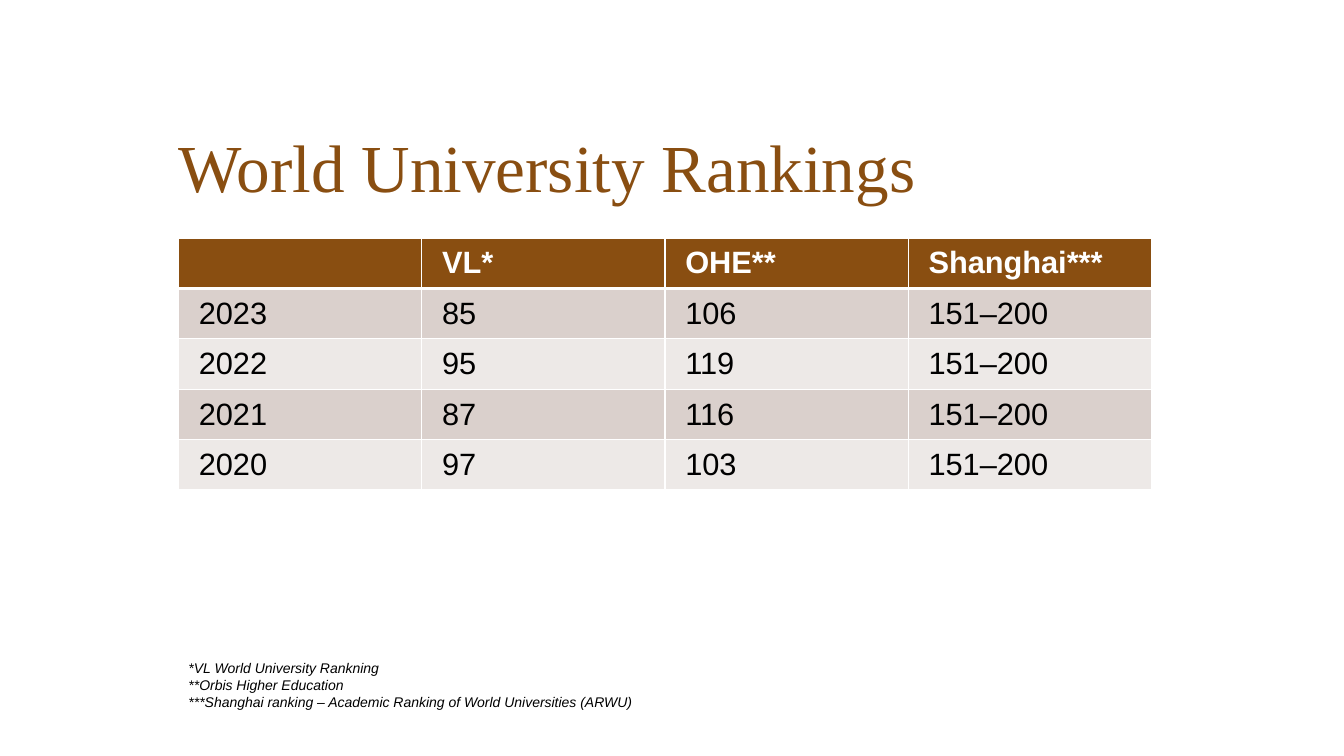
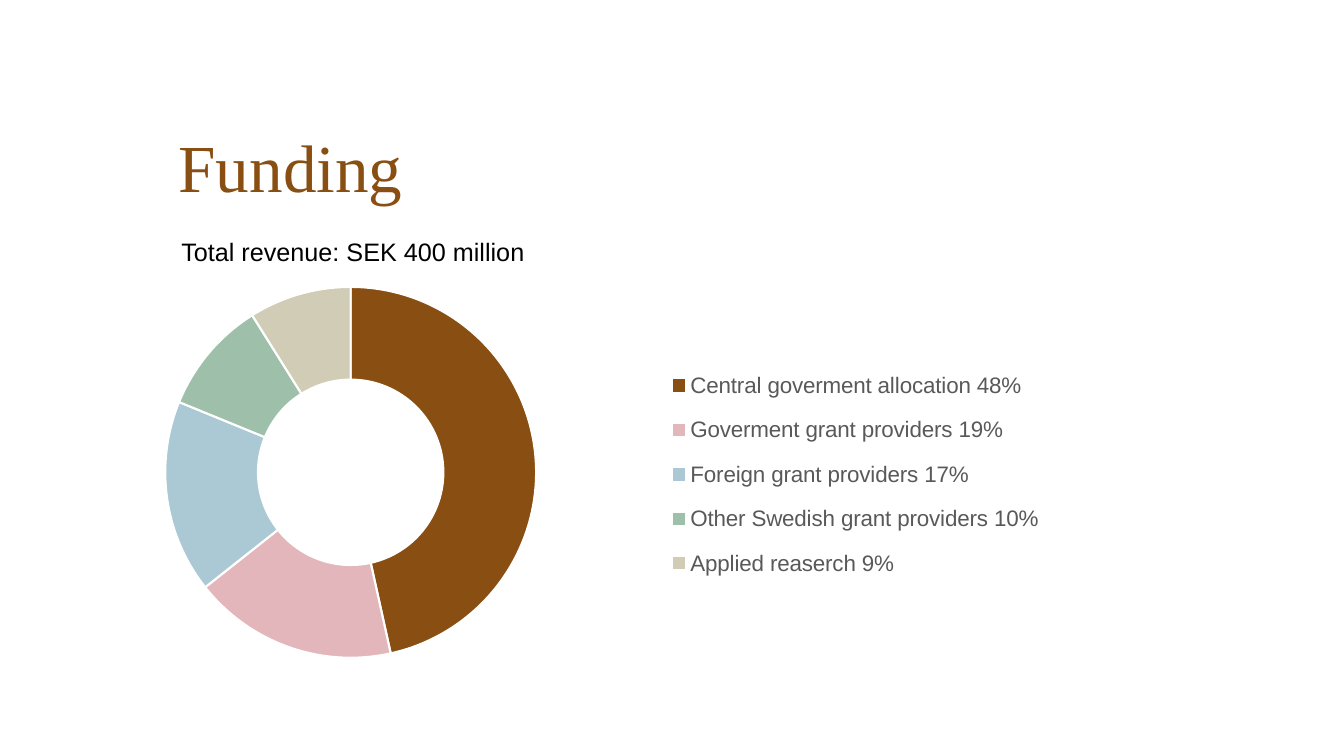
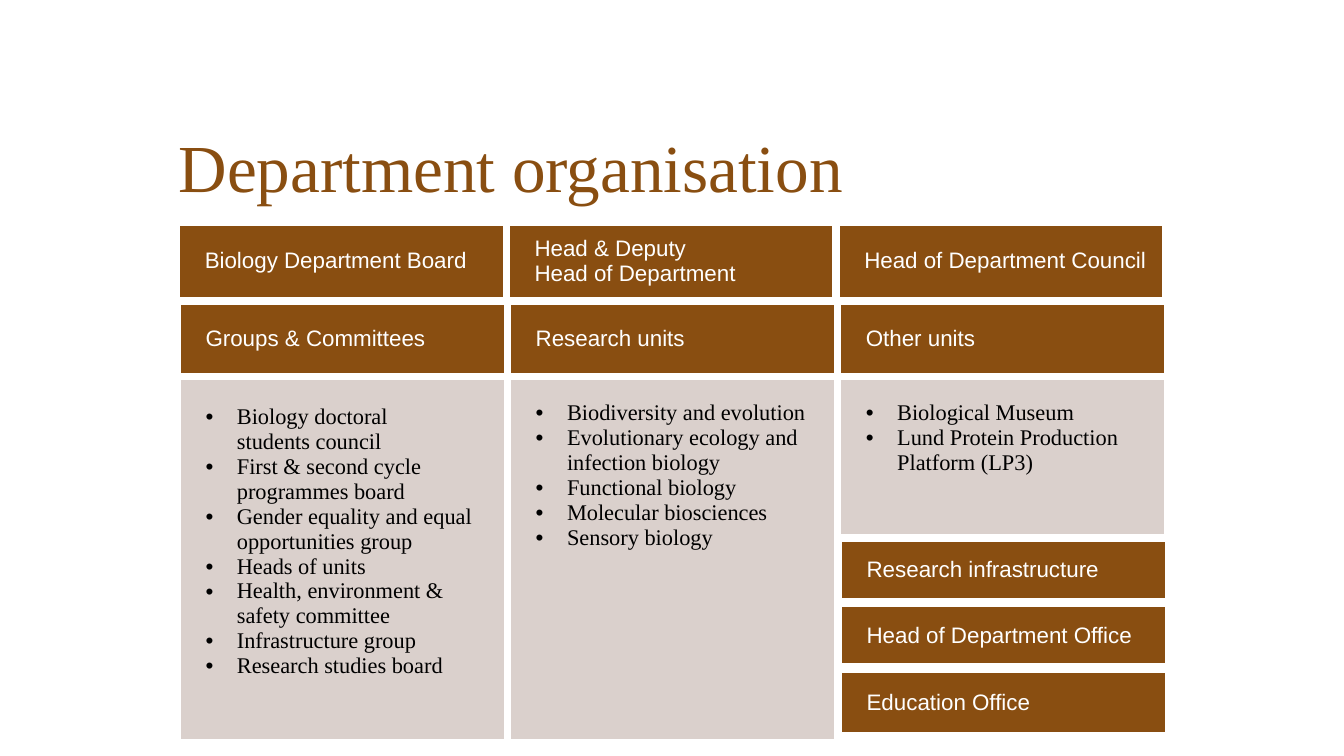
from copy import deepcopy
from dataclasses import dataclass, replace
from typing import Any

from lxml import etree
from pptx import Presentation
from pptx.chart.data import CategoryChartData
from pptx.dml.color import RGBColor
from pptx.enum.chart import XL_CHART_TYPE, XL_LEGEND_POSITION
from pptx.enum.text import MSO_ANCHOR, MSO_AUTO_SIZE, PP_ALIGN
from pptx.oxml.ns import qn
from pptx.util import Cm, Pt

RING = XL_CHART_TYPE.DOUGHNUT
RIGHT = XL_LEGEND_POSITION.RIGHT
TOP, MID, LOW = MSO_ANCHOR.TOP, MSO_ANCHOR.MIDDLE, MSO_ANCHOR.BOTTOM
FIXED, GROW = MSO_AUTO_SIZE.NONE, MSO_AUTO_SIZE.SHAPE_TO_FIT_TEXT
LEFT = PP_ALIGN.LEFT


@dataclass(frozen=True)
class Theme:
    sans: str = "Arial"
    serif: str = "Times New Roman"
    brown: str = "894E11"
    sand: str = "DAD0CC"
    pale: str = "EDE9E7"
    rose: str = "E3B6BB"
    blue: str = "ABC9D4"
    green: str = "9EC0AA"
    stone: str = "D0CCB6"
    grey: str = "595959"
    black: str = "000000"
    white: str = "FFFFFF"
    title: int = 48
    grid: int = 22
    lead: int = 18
    unit: int = 16
    note: int = 10


T = Theme()


@dataclass(frozen=True)
class Type:
    size: int
    font: str = T.sans
    color: str = T.black
    bold: bool = False
    slant: bool = False


@dataclass(frozen=True)
class Box:
    left: float
    top: float
    width: float
    height: float


@dataclass(frozen=True)
class Edge:
    left: float = 1
    right: float = 1
    top: float = 1
    base: float = 1


@dataclass(frozen=True)
class Look:
    type: Type
    fill: str
    inset: tuple[float, float, float, float]
    edge: Edge
    anchor: Any = TOP
    list: bool = False


@dataclass(frozen=True)
class Cell:
    lines: tuple[str, ...]
    look: Look


@dataclass(frozen=True)
class Unit:
    name: str
    height: float


@dataclass(frozen=True)
class Share:
    name: str
    value: int
    color: str


WIDE = Edge(6, 6, 6, 6)
HEAD = Look(Type(T.grid, color=T.white, bold=True), T.brown,
            (0.51, 0.2, 0.51, 0.2), Edge(base=3))
ROW = replace(HEAD, type=Type(T.grid), fill=T.sand, edge=Edge())
BAR = Look(Type(T.unit, color=T.white), T.brown,
           (0.71, 0.13, 0.25, 0.13), WIDE, MID)
LIST = Look(Type(T.unit, T.serif), T.sand, (0.71, 0.61, 0.25, 0.13),
            WIDE, list=True)

RANKS = (
    ("2023", "85", "106"),
    ("2022", "95", "119"),
    ("2021", "87", "116"),
    ("2020", "97", "103"),
)
NOTES = (
    "*VL World University Rankning",
    "**Orbis Higher Education",
    "***Shanghai ranking – Academic Ranking of World Universities (ARWU)",
)
SHARES = (
    Share("Central goverment allocation 48%", 47, T.brown),
    Share("Goverment grant providers 19%", 18, T.rose),
    Share("Foreign grant providers 17%", 17, T.blue),
    Share("Other Swedish grant providers 10%", 10, T.green),
    Share("Applied reaserch 9%", 9, T.stone),
)
BOARDS = ("Biology Department Board", "Head & Deputy\nHead of Department",
          "Head of Department Council")
AREAS = ("Groups & Committees", "Research units", "Other units")
GROUPS = (
    "Biology doctoral\nstudents council",
    "First & second cycle programmes board",
    "Gender equality and equal opportunities group",
    "Heads of units",
    "Health, environment & safety committee",
    "Infrastructure group",
    "Research studies board",
)
FIELDS = (
    "Biodiversity and evolution",
    "Evolutionary ecology and infection biology",
    "Functional biology",
    "Molecular biosciences",
    "Sensory biology",
)
OTHERS = ("Biological Museum", "Lund Protein Production Platform (LP3)")
UNITS = (
    Unit("Research infrastructure", 1.6),
    Unit("Head of Department Office", 1.6),
    Unit("Education Office", 1.68),
)


def rgb(color: str) -> RGBColor:
    return RGBColor.from_string(color)


def span(box: Box) -> tuple[int, ...]:
    return Cm(box.left), Cm(box.top), Cm(box.width), Cm(box.height)


def style(font: Any, kind: Type) -> None:
    font.name = kind.font
    font.size = Pt(kind.size)
    font.bold = kind.bold
    font.italic = kind.slant
    font.color.rgb = rgb(kind.color)


def bullet(para: Any) -> None:
    props = para._p.get_or_add_pPr()
    props.set("marL", str(Cm(0.79)))
    props.set("indent", str(-Cm(0.79)))
    etree.SubElement(props, qn("a:buFont")).set("typeface", T.sans)
    etree.SubElement(props, qn("a:buChar")).set("char", "•")


def write(frame: Any, lines: tuple[str, ...], kind: Type,
          listed: bool = False) -> None:
    for num, line in enumerate(lines):
        para = frame.add_paragraph() if num else frame.paragraphs[0]
        para.text = line
        if listed:
            bullet(para)
        for run in para.runs:
            style(run.font, kind)
        for gap in para._p.findall(qn("a:br")):
            gap.insert(0, deepcopy(para.runs[0]._r.rPr))


def border(cell: Any, edge: Edge) -> None:
    props = cell._tc.get_or_add_tcPr()
    sides = (("L", edge.left), ("R", edge.right),
             ("T", edge.top), ("B", edge.base))
    for spot, (side, width) in enumerate(sides):
        line = etree.Element(qn(f"a:ln{side}"), w=str(Pt(width)))
        fill = etree.SubElement(line, qn("a:solidFill"))
        etree.SubElement(fill, qn("a:srgbClr")).set("val", T.white)
        props.insert(spot, line)


def paint(cell: Any, data: Cell) -> None:
    look = data.look
    cell.fill.solid()
    cell.fill.fore_color.rgb = rgb(look.fill)
    (cell.margin_left, cell.margin_top,
     cell.margin_right, cell.margin_bottom) = map(Cm, look.inset)
    cell.vertical_anchor = look.anchor
    write(cell.text_frame, data.lines, look.type, look.list)
    border(cell, look.edge)


def table(slide: Any, left: float, top: float, width: float,
          highs: tuple[float, ...], rows: list[list[Cell]]) -> None:
    cols = len(rows[0])
    box = Box(left, top, width * cols, sum(highs))
    grid = slide.shapes.add_table(len(rows), cols, *span(box)).table
    grid.first_row = grid.horz_banding = False
    for col in grid.columns:
        col.width = Cm(width)
    for line, high, cells in zip(grid.rows, highs, rows):
        line.height = Cm(high)
        for cell, data in zip(line.cells, cells):
            paint(cell, data)


def row(names: tuple[str, ...], look: Look) -> list[Cell]:
    return [Cell((name,) if name else (), look) for name in names]


def label(slide: Any, box: Box, lines: tuple[str, ...], kind: Type) -> None:
    frame = slide.shapes.add_textbox(*span(box)).text_frame
    frame.word_wrap = True
    frame.auto_size = GROW
    write(frame, lines, kind)


def page(deck: Any, name: str) -> Any:
    slide = deck.slides.add_slide(deck.slide_layouts[5])
    title = slide.shapes.title
    title.left, title.top, title.width, title.height = span(
        Box(4.5, 1, 24.5, 5))
    frame = title.text_frame
    frame.auto_size = FIXED
    frame.vertical_anchor = LOW
    frame.margin_left = frame.margin_top = frame.margin_right = 0
    frame.margin_bottom = Cm(0.79)
    write(frame, (name,), Type(T.title, T.serif, T.brown))
    frame.paragraphs[0].alignment = LEFT
    frame.paragraphs[0].line_spacing = 0.9
    return slide


def layout(area: Box, inner: bool) -> Any:
    root = etree.Element(qn("c:layout"))
    form = etree.SubElement(root, qn("c:manualLayout"))
    parts = [("layoutTarget", "inner")] if inner else []
    parts += [("xMode", "edge"), ("yMode", "edge"),
              ("x", area.left), ("y", area.top),
              ("w", area.width), ("h", area.height)]
    for tag, value in parts:
        etree.SubElement(form, qn(f"c:{tag}")).set("val", str(value))
    return root


def place(parent: Any, spot: int, area: Box, inner: bool = False) -> None:
    for old in parent.findall(qn("c:layout")):
        parent.remove(old)
    parent.insert(spot, layout(area, inner))


def ring(slide: Any, box: Box, shares: tuple[Share, ...]) -> None:
    data = CategoryChartData()
    data.categories = [share.name for share in shares]
    data.add_series("Series 1", [share.value for share in shares])
    chart = slide.shapes.add_chart(RING, *span(box), data).chart
    chart.has_title = False
    style(chart.font, Type(T.note))
    chart.has_legend = True
    chart.legend.position = RIGHT
    chart.legend.include_in_layout = False
    style(chart.legend.font, Type(T.unit, color=T.grey))
    plot = chart.plots[0]
    plot.vary_by_categories = True
    for num, share in enumerate(shares):
        form = plot.series[0].points[num].format
        form.fill.solid()
        form.fill.fore_color.rgb = rgb(share.color)
        form.line.color.rgb = rgb(T.white)
        form.line.width = Pt(1.5)
    root = plot._element
    hole = root.find(qn("c:holeSize"))
    if hole is None:
        hole = etree.SubElement(root, qn("c:holeSize"))
    hole.set("val", "49")
    place(root.getparent(), 0, Box(0.13, 0.03, 0.36, 0.93), True)
    place(chart.legend._element, 1, Box(0.61, 0.2, 0.38, 0.6))


def ranking(deck: Any) -> None:
    slide = page(deck, "World University Rankings")
    rows = [row(("", "VL*", "OHE**", "Shanghai***"), HEAD)]
    for num, rank in enumerate(RANKS):
        look = replace(ROW, fill=T.pale if num % 2 else T.sand,
                       edge=Edge(top=1 if num else 3))
        rows.append(row((*rank, "151–200"), look))
    table(slide, 4.5, 6, 6.13, (1.05,) * len(rows), rows)
    label(slide, Box(4.5, 16.5, 24.5, 1.55), NOTES,
          Type(T.note, slant=True))


def funding(deck: Any) -> None:
    slide = page(deck, "Funding")
    ring(slide, Box(0.79, 6.86, 25.96, 10.19), SHARES)
    label(slide, Box(4.32, 5.84, 9.88, 1.02),
          ("Total revenue: SEK 400 million",), Type(T.lead))


def staff(deck: Any) -> None:
    slide = page(deck, "Department organisation")
    table(slide, 4.45, 5.59, 8.31, (1.98,), [row(BOARDS, BAR)])
    first = replace(LIST, inset=(0.71, 0.71, 0.25, 0.13))
    lists = [Cell(GROUPS, first), Cell(FIELDS, LIST), Cell(OTHERS, LIST)]
    table(slide, 4.47, 7.59, 8.32, (1.9, 9.22), [row(AREAS, BAR), lists])
    for num, unit in enumerate(UNITS):
        table(slide, 21.13, 13.56 + num * 1.65, 8.31, (unit.height,),
              [row((unit.name,), BAR)])


def main() -> None:
    deck = Presentation()
    deck.slide_width, deck.slide_height = Cm(33.87), Cm(19.05)
    for draw in (ranking, funding, staff):
        draw(deck)
    deck.save("out.pptx")


if __name__ == "__main__":
    main()
